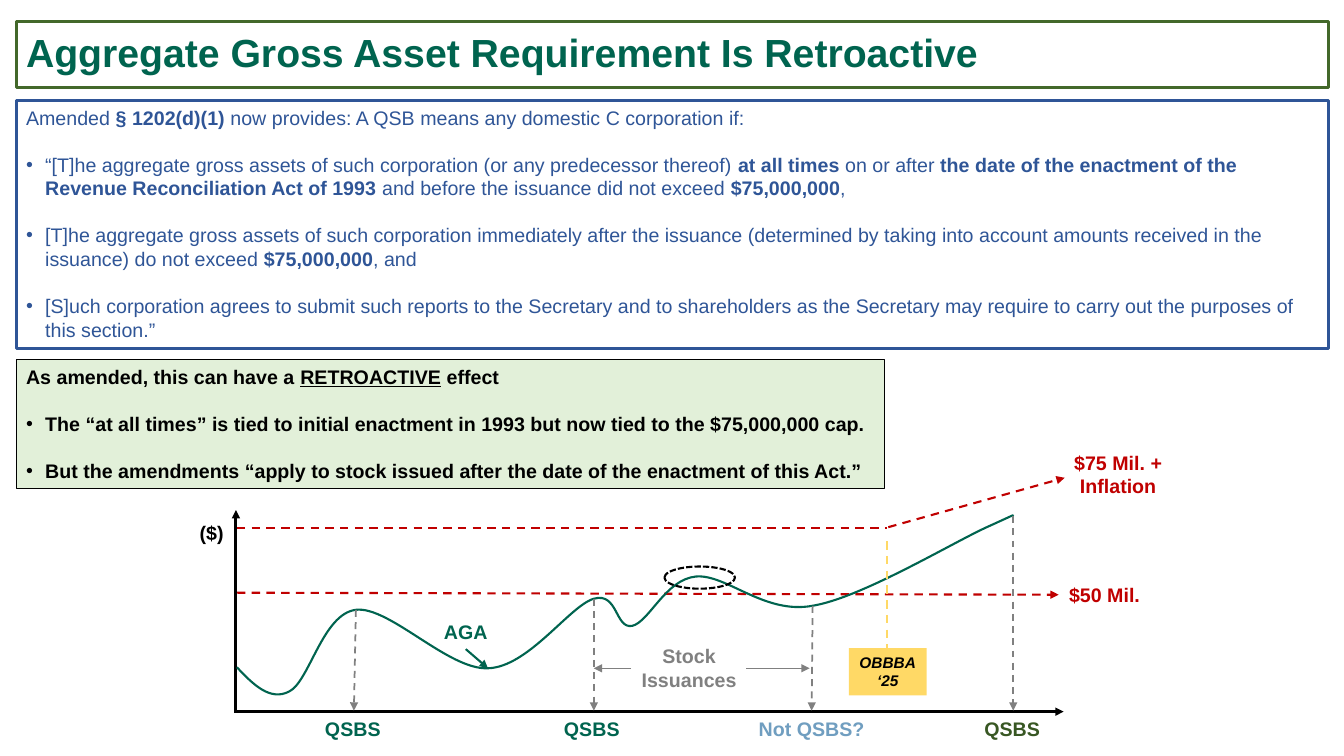
from pptx import Presentation
from pptx.dml.color import RGBColor
from pptx.enum.dml import MSO_LINE
from pptx.enum.shapes import MSO_CONNECTOR, MSO_SHAPE
from pptx.enum.text import MSO_ANCHOR, PP_ALIGN
from pptx.oxml.ns import qn
from pptx.util import Pt
from lxml.etree import SubElement

PX = 9144  # EMU in one px, 100 px to the inch
GREEN, BLUE, RED, GREY = "00644F", "2F5597", "C00000", "808080"
BLACK, GOLD = "000000", "FFD966"
SOLID, DASH, DOT = None, MSO_LINE.DASH, MSO_LINE.SQUARE_DOT

# Paragraphs are lists of (text, style): b bold, i italic, u underlined
TITLE = [[("Aggregate Gross Asset Requirement Is Retroactive", "b")]]
LAW = [
    [("Amended ", ""), ("§ 1202(d)(1)", "b"),
     (" now provides: A QSB means any domestic C corporation if:", "")],
    [("“[T]he aggregate gross assets of such corporation (or any predecessor thereof) ", ""),
     ("at all times ", "b"), ("on or after", ""),
     (" the date of the enactment of the Revenue Reconciliation Act of 1993", "b"),
     (" and before the issuance did not exceed ", ""), ("$75,000,000", "b"), (",", "")],
    [("[T]he aggregate gross assets of such corporation immediately after the issuance "
      "(determined by taking into account amounts received in the issuance) do not exceed ", ""),
     ("$75,000,000", "b"), (", and", "")],
    [("[S]uch corporation agrees to submit such reports to the Secretary and to shareholders "
      "as the Secretary may require to carry out the purposes of this section.”", "")],
]
EFFECT = [
    [("As amended, this can have a ", "b"), ("RETROACTIVE", "bu"), (" effect", "b")],
    [("The “at all times” is tied to initial enactment in 1993 "
      "but now tied to the $75,000,000 cap.", "b")],
    [("But the amendments “apply to stock issued after the date of the enactment of this Act.”",
      "b")],
]

# Lines of text, left, top, width, height, colour
LABELS = [
    (["$50 Mil."], 1050, 573, 91, 34, RED),
    (["$75 Mil. +", "Inflation"], 1055, 442, 108, 57, RED),
    (["($)"], 188, 512, 44, 34, BLACK),
    (["AGA"], 430, 610, 64, 34, GREEN),
    (["Stock", "Issuances"], 626, 634, 115, 57, GREY),
    (["QSBS"], 312, 706, 76, 34, GREEN),
    (["QSBS"], 549, 706, 76, 34, GREEN),
    (["Not QSBS?"], 742, 706, 126, 34, "709EC0"),
    (["QSBS"], 966, 706, 76, 34, "385723"),
]

# From x, y to x, y, colour, points, dash, arrow
LIMITS = [
    (235, 588, 1050, 590, RED, 1.5, DASH, True),
    (235, 524, 880, 524, RED, 1.5, DASH, False),
    (881, 523, 1056, 474, RED, 1.5, DASH, True),
]
AXES = [
    (233, 706, 1055, 706, BLACK, 2, SOLID, True),
    (234, 707, 234, 506, BLACK, 2, SOLID, True),
]
DROPS = [(x, y, foot, 705, GREY, 1.25, DASH, True) for x, y, foot in
         [(353, 605, 351), (589, 594, 589), (806, 601, 805), (1005, 512, 1005)]]
POINTERS = [
    (626, 663, 589, 663, GREY, 1, SOLID, True),
    (740, 663, 803, 663, GREY, 1, SOLID, True),
    (462, 644, 484, 663, GREEN, 1.5, SOLID, True),
    (880, 537, 880, 643, GOLD, 1.5, DASH, False),
]

# Asset curve: its bounds, its start, then two handles and an end for each bend
BOUNDS = (235, 511, 1005, 689)
START = (235, 662)
BENDS = [
    ((251, 679), (268, 696), (287, 686)),
    ((307, 676), (320, 609), (353, 605)),
    ((386, 601), (445, 665), (484, 663)),
    ((524, 662), (565, 601), (589, 594)),
    ((613, 587), (610, 624), (627, 621)),
    ((644, 617), (660, 575), (690, 572)),
    ((720, 569), (758, 610), (806, 601)),
    ((855, 593), (947, 537), (981, 522)),
    ((1014, 507), (1002, 512), (1005, 512)),
]

deck = Presentation()
deck.slide_width, deck.slide_height = 1333 * PX, 750 * PX
slide = deck.slides.add_slide(deck.slide_layouts[6])
shapes = slide.shapes


def rgb(code):
    return RGBColor.from_string(code)


def paint(shape, fill=None, edge=None, width=1, dash=SOLID):
    shape.shadow.inherit = False
    if fill:
        shape.fill.solid()
        shape.fill.fore_color.rgb = rgb(fill)
    else:
        shape.fill.background()
    if edge:
        shape.line.color.rgb = rgb(edge)
        shape.line.width = Pt(width)
        shape.line.dash_style = dash
    else:
        shape.line.fill.background()


def box(kind, left, top, wide, high, **look):
    shape = shapes.add_shape(kind, left * PX, top * PX, wide * PX, high * PX)
    paint(shape, **look)
    return shape


def write(shape, paras, size, color, align=PP_ALIGN.LEFT, wrap=True,
          anchor=MSO_ANCHOR.TOP, gap=0):
    frame = shape.text_frame
    frame.word_wrap = wrap
    frame.vertical_anchor = anchor
    for n, runs in enumerate(paras):
        para = frame.add_paragraph() if n else frame.paragraphs[0]
        para.alignment = align
        if n and gap:
            para.space_before = Pt(gap)
        for text, style in runs:
            run = para.add_run()
            run.text = text
            font = run.font
            font.name, font.size = "Arial", Pt(size)
            font.color.rgb = rgb(color)
            font.bold = "b" in style
            font.italic = "i" in style
            font.underline = "u" in style
    return frame


def bullet(para):
    props = para._p.get_or_add_pPr()
    props.set("marL", str(19 * PX))
    props.set("indent", str(-19 * PX))
    SubElement(props, qn("a:buFont")).set("typeface", "Arial")
    SubElement(props, qn("a:buChar")).set("char", "•")


def panel(paras, color, *place, **look):
    """Framed text with bullets on all but its first paragraph."""
    frame = write(box(MSO_SHAPE.RECTANGLE, *place, **look), paras, 14, color, gap=16.8)
    for para in frame.paragraphs[1:]:
        bullet(para)


def link(x1, y1, x2, y2, color, width, dash, arrow):
    line = shapes.add_connector(MSO_CONNECTOR.STRAIGHT, x1 * PX, y1 * PX, x2 * PX, y2 * PX)
    line.line.color.rgb = rgb(color)
    line.line.width = Pt(width)
    line.line.dash_style = dash
    props = line._element.spPr
    if arrow:
        SubElement(props.find(qn("a:ln")), qn("a:tailEnd")).set("type", "triangle")
    SubElement(props, qn("a:effectLst"))


def curve(bounds, start, bends):
    """Freeform of the given bounds whose outline is a chain of cubic curves."""
    left, top, right, foot = (n * PX for n in bounds)
    pen = shapes.build_freeform(left, top)
    pen.add_line_segments([(right, foot)], close=False)
    shape = pen.convert_to_shape()
    track = shape._element.spPr.find(".//" + qn("a:path"))
    for step in list(track):
        track.remove(step)
    for tag, points in [("a:moveTo", [start])] + [("a:cubicBezTo", b) for b in bends]:
        step = SubElement(track, qn(tag))
        for x, y in points:
            spot = SubElement(step, qn("a:pt"))
            spot.set("x", str(x * PX - left))
            spot.set("y", str(y * PX - top))
    return shape


head = box(MSO_SHAPE.RECTANGLE, 16, 21, 1302, 66, edge="43682A", width=2)
write(head, TITLE, 28, GREEN, anchor=MSO_ANCHOR.MIDDLE).paragraphs[0].line_spacing = 0.9
panel(LAW, BLUE, 16, 100, 1302, 246, edge=BLUE, width=2)
panel(EFFECT, BLACK, 16, 357, 861, 128, fill="E2F0D9", edge=BLACK, width=0.75)

for item in LIMITS + AXES:
    link(*item)

paint(curve(BOUNDS, START, BENDS), edge=GREEN, width=1.5)

for item in DROPS + POINTERS:
    link(*item)

box(MSO_SHAPE.OVAL, 659, 562, 70, 22, edge=BLACK, width=1.5, dash=DOT)
act = box(MSO_SHAPE.RECTANGLE, 842, 643, 77, 47, fill=GOLD)
write(act, [[("OBBBA", "bi")], [("‘25", "bi")]], 11, BLACK, PP_ALIGN.CENTER, False)

for lines, left, top, wide, high, color in LABELS:
    label = shapes.add_textbox(left * PX, top * PX, wide * PX, high * PX)
    write(label, [[(line, "b")] for line in lines], 14, color, PP_ALIGN.CENTER, False)

deck.save("out.pptx")
